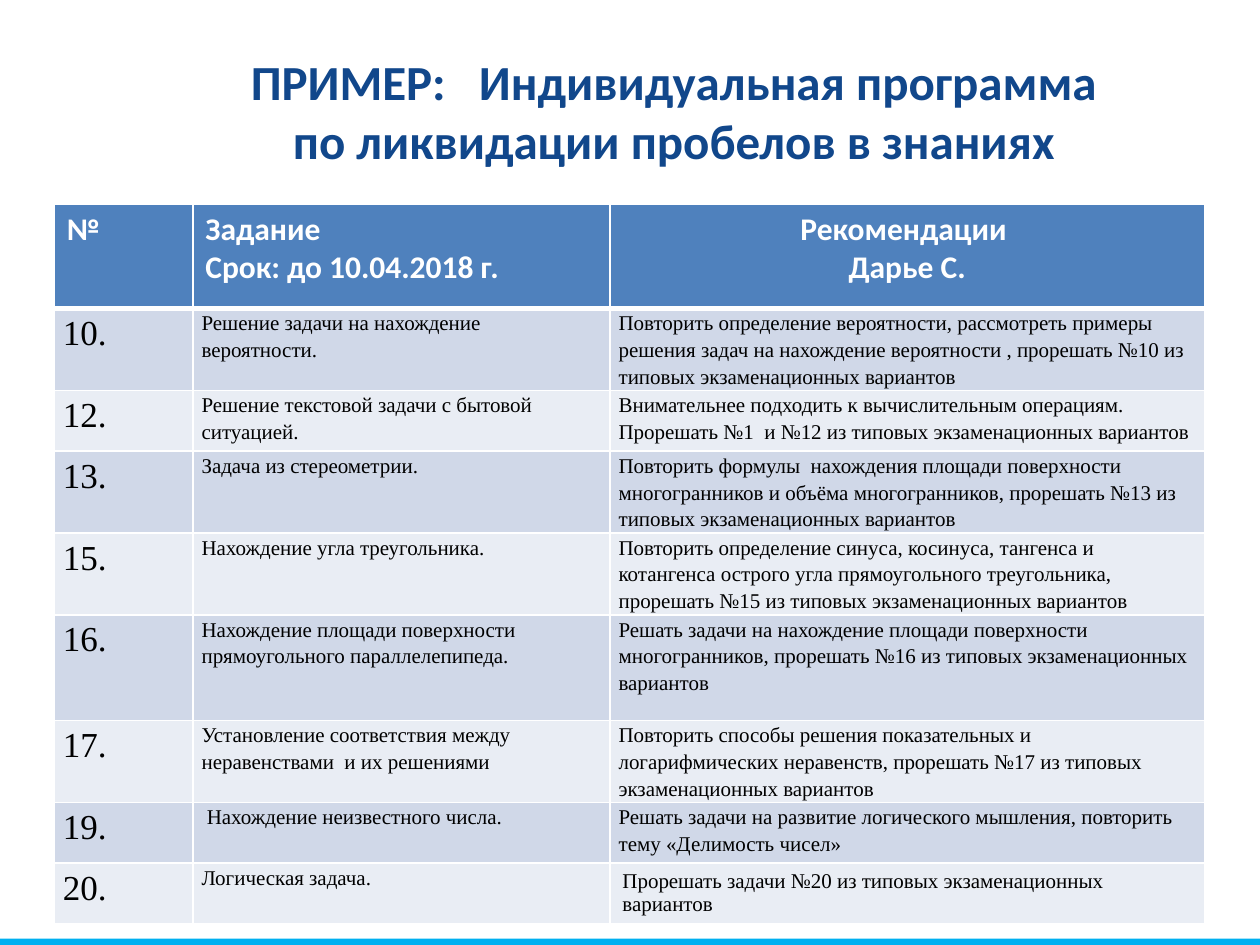
from dataclasses import dataclass

import pptx
import pptx.dml.color
import pptx.enum.shapes
import pptx.enum.text
import pptx.oxml
import pptx.oxml.ns
import pptx.util
from pptx.util import Inches

Color = pptx.dml.color.RGBColor.from_string
Align = pptx.enum.text.PP_ALIGN


@dataclass(frozen=True)
class Theme:
    heading_font: str = "Calibri"
    body_font: str = "Times New Roman"
    title_color: str = "11478B"
    header_fill: str = "4F81BD"
    band_fills: tuple = ("D0D8E8", "E9EDF4")
    white: str = "FFFFFF"
    black: str = "000000"
    strip: str = "00B0F0"
    title_size: int = 28
    header_size: int = 18
    number_size: int = 20
    body_size: int = 12
    thin_border: int = 1
    thick_border: int = 3


THEME = Theme()
COLUMN_WIDTHS = (1.1, 3.31, 4.72)
ROW_HEIGHTS = (0.83, 0.65, 0.48, 0.65, 0.65, 0.84, 0.65, 0.48, 0.48)
HEADERS = ("№", "Задание\nСрок: до 10.04.2018 г.", "Рекомендации \nДарье С.")
TASKS = (
    ("10.", "Решение задачи на нахождение вероятности.",
     "Повторить определение вероятности, рассмотреть примеры решения задач на нахождение "
     "вероятности , прорешать №10 из типовых экзаменационных вариантов"),
    ("12.", "Решение текстовой задачи с бытовой ситуацией.",
     "Внимательнее подходить к вычислительным операциям. "
     "Прорешать №1  и №12 из типовых экзаменационных вариантов"),
    ("13.", "Задача из стереометрии.",
     "Повторить формулы  нахождения площади поверхности многогранников и объёма "
     "многогранников, прорешать №13 из типовых экзаменационных вариантов"),
    ("15.", "Нахождение угла треугольника.",
     "Повторить определение синуса, косинуса, тангенса и котангенса острого угла "
     "прямоугольного треугольника, прорешать №15 из типовых экзаменационных вариантов"),
    ("16.", "Нахождение площади поверхности прямоугольного параллелепипеда.",
     "Решать задачи на нахождение площади поверхности многогранников, "
     "прорешать №16 из типовых экзаменационных вариантов"),
    ("17.", "Установление соответствия между неравенствами  и их решениями",
     "Повторить способы решения показательных и логарифмических неравенств, "
     "прорешать №17 из типовых экзаменационных вариантов"),
    ("19.", " Нахождение неизвестного числа.",
     "Решать задачи на развитие логического мышления, повторить тему «Делимость чисел»"),
    ("20.", "Логическая задача.",
     "Прорешать задачи №20 из типовых экзаменационных вариантов"),
)


def format_text(text_frame, font_name, size, color, bold, alignment, line_spacing=None):
    for paragraph in text_frame.paragraphs:
        paragraph.alignment = alignment
        if line_spacing:
            paragraph.line_spacing = line_spacing
        for run in paragraph.runs:
            run.font.name = font_name
            run.font.size = pptx.util.Pt(size)
            run.font.bold = bold
            run.font.color.rgb = Color(color)


def set_borders(cell, top, bottom):
    properties = cell._tc.get_or_add_tcPr()
    widths = {"lnL": THEME.thin_border, "lnR": THEME.thin_border, "lnT": top, "lnB": bottom}
    for index, (tag, width) in enumerate(widths.items()):
        properties.insert(index, pptx.oxml.parse_xml(
            f'<a:{tag} {pptx.oxml.ns.nsdecls("a")} w="{pptx.util.Pt(width)}">'
            f'<a:solidFill><a:srgbClr val="{THEME.white}"/></a:solidFill></a:{tag}>'))


def fill_cell(cell, text, fill):
    cell.text_frame.text = text
    cell.fill.solid()
    cell.fill.fore_color.rgb = Color(fill)


def add_strip(slide, left, top, width, height):
    strip = slide.shapes.add_shape(
        pptx.enum.shapes.MSO_SHAPE.RECTANGLE, left, top, width, height)
    strip.shadow.inherit = False
    strip.fill.solid()
    strip.fill.fore_color.rgb = Color(THEME.strip)
    strip.line.fill.background()


def place_title(slide, left, top, width, height):
    title = slide.shapes.title
    title.left, title.top, title.width, title.height = left, top, width, height
    text_frame = title.text_frame
    text_frame.text = "ПРИМЕР:   Индивидуальная программа \vпо ликвидации пробелов в знаниях "
    text_frame.word_wrap = True
    text_frame.auto_size = pptx.enum.text.MSO_AUTO_SIZE.NONE
    text_frame.vertical_anchor = pptx.enum.text.MSO_ANCHOR.TOP
    format_text(text_frame, THEME.heading_font, THEME.title_size, THEME.title_color,
                True, Align.CENTER)


def add_program_table(slide, left, top, width, height):
    table = slide.shapes.add_table(
        len(ROW_HEIGHTS), len(COLUMN_WIDTHS), left, top, width, height).table
    for column, column_width in zip(table.columns, COLUMN_WIDTHS):
        column.width = Inches(column_width)
    for row, row_height in zip(table.rows, ROW_HEIGHTS):
        row.height = Inches(row_height)

    for column_index, text in enumerate(HEADERS):
        cell = table.cell(0, column_index)
        fill_cell(cell, text, THEME.header_fill)
        set_borders(cell, THEME.thin_border, THEME.thick_border)
        alignment = Align.CENTER if column_index == 2 else Align.LEFT
        format_text(cell.text_frame, THEME.heading_font, THEME.header_size, THEME.white,
                    True, alignment)

    for row_index, task in enumerate(TASKS, start=1):
        for column_index, text in enumerate(task):
            cell = table.cell(row_index, column_index)
            fill_cell(cell, text, THEME.band_fills[(row_index - 1) % 2])
            set_borders(cell, THEME.thick_border if row_index == 1 else THEME.thin_border,
                        THEME.thin_border)
            is_last = row_index == len(TASKS) and column_index == 2
            if not is_last:
                cell.margin_left = cell.margin_right = Inches(0.07)
                cell.margin_top = cell.margin_bottom = 0
            size = THEME.number_size if column_index == 0 else THEME.body_size
            format_text(cell.text_frame, THEME.body_font, size, THEME.black, False,
                        Align.LEFT, None if is_last else 1.15)


def main():
    presentation = pptx.Presentation()
    presentation.slide_width, presentation.slide_height = Inches(10), Inches(7.5)
    slide = presentation.slides.add_slide(presentation.slide_layouts[5])
    add_strip(slide, 0, Inches(7.45), Inches(10), Inches(0.05))
    place_title(slide, Inches(1.14), Inches(0.36), Inches(8.5), Inches(0.94))
    add_program_table(slide, Inches(0.43), Inches(1.62),
                      Inches(sum(COLUMN_WIDTHS)), Inches(sum(ROW_HEIGHTS)))
    presentation.save("out.pptx")


if __name__ == "__main__":
    main()
